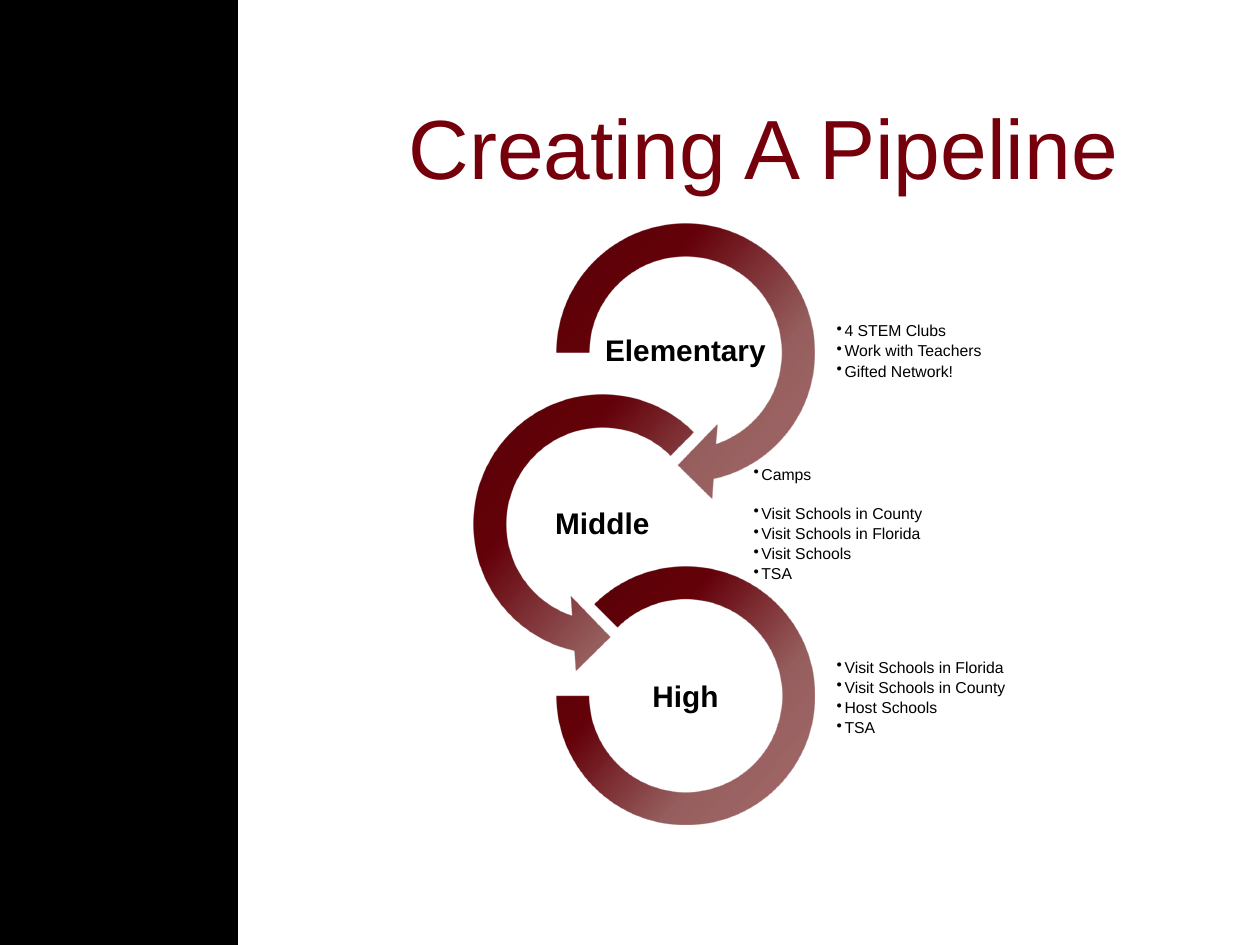
from dataclasses import dataclass

from lxml import etree
from pptx import Presentation
from pptx.dml.color import RGBColor
from pptx.enum.shapes import MSO_SHAPE
from pptx.enum.text import MSO_ANCHOR, PP_ALIGN
from pptx.oxml.ns import qn
from pptx.util import Pt

RECTANGLE = MSO_SHAPE.RECTANGLE
RIGHT_ARROW = MSO_SHAPE.CIRCULAR_ARROW
LEFT_ARROW = MSO_SHAPE.LEFT_CIRCULAR_ARROW
ARC = MSO_SHAPE.BLOCK_ARC
LEFT, CENTER = PP_ALIGN.LEFT, PP_ALIGN.CENTER
MIDDLE, BOTTOM = MSO_ANCHOR.MIDDLE, MSO_ANCHOR.BOTTOM

BLACK = RGBColor(0x00, 0x00, 0x00)
MAROON = RGBColor(0x75, 0x00, 0x0B)
ROSE = RGBColor(0x97, 0x52, 0x53)
DUSTY_ROSE = RGBColor(0x92, 0x57, 0x57)
WINE = RGBColor(0x64, 0x00, 0x09)
DARK_WINE = RGBColor(0x57, 0x00, 0x08)

# Position, colour and opacity, in percent
GRADIENT = [(0, ROSE, 85), (33, DUSTY_ROSE, 95), (67, WINE, 100), (100, DARK_WINE, 100)]
GRADIENT_ANGLE = 140

FONT = "Arial"
FIRST_RING_Y, RING_PITCH = 201.6, 97.9
FIRST_TEXT_Y, TEXT_PITCH = 201, 99
LABEL_WIDTH, LABEL_HEIGHT = 95, 47.5
LIST_OFFSET, LIST_WIDTH, LIST_HEIGHT = 85.7, 103, 68.4
BULLET_INDENT = 4.5


@dataclass
class Stage:
    name: str
    kind: int
    center_x: float
    size: float
    adjustments: tuple[float, ...]
    items: list[str]
    gap_after_first: float = 0


STAGES = [
    Stage("Elementary", RIGHT_ARROW, 391.7, 171.4, (0.11, 11.42, 45, 108, 0.125),
          ["4 STEM Clubs", "Work with Teachers", "Gifted Network!"]),
    Stage("Middle", LEFT_ARROW, 344.2, 171.4, (0.11, 11.42, 63, 189, 0.125),
          ["Camps", "Visit Schools in County", "Visit Schools in Florida",
           "Visit Schools", "TSA"], gap_after_first=10.7),
    Stage("High", ARC, 391.7, 147.2, (135, 108, 0.127),
          ["Visit Schools in Florida", "Visit Schools in County",
           "Host Schools", "TSA"]),
]


def add_plain_shape(page, kind: int, left: float, top: float,
                    width: float, height: float):
    shape = page.shapes.add_shape(kind, Pt(left), Pt(top), Pt(width), Pt(height))
    shape.shadow.inherit = False
    shape.line.fill.background()
    return shape


def fill_with_gradient(shape) -> None:
    shape.fill.gradient()
    shape.fill.gradient_angle = GRADIENT_ANGLE
    stops = shape._element.spPr.find(qn("a:gradFill")).find(qn("a:gsLst"))
    for stop in list(stops):
        stops.remove(stop)
    for position, color, opacity in GRADIENT:
        stop = etree.SubElement(stops, qn("a:gs"), pos=str(position * 1000))
        tint = etree.SubElement(stop, qn("a:srgbClr"), val=str(color))
        if opacity < 100:
            etree.SubElement(tint, qn("a:alpha"), val=str(opacity * 1000))


def add_bullet(para) -> None:
    properties = para._p.get_or_add_pPr()
    properties.set("marL", str(Pt(BULLET_INDENT)))
    properties.set("indent", str(-Pt(BULLET_INDENT)))
    etree.SubElement(properties, qn("a:buChar"), char="•")


def add_text(page, lines: list[str], left: float, top: float, width: float,
             height: float, *, size: float, color: RGBColor = BLACK,
             bold: bool = False, align=CENTER, anchor=MIDDLE,
             inset_x: float = 0.7, inset_y: float = 0.7,
             line_spacing: float = 0.9, space_after: float = 0,
             gap_after_first: float = 0, bullets: bool = False) -> None:
    box = page.shapes.add_textbox(Pt(left), Pt(top), Pt(width), Pt(height))
    frame = box.text_frame
    frame.word_wrap = True
    frame.vertical_anchor = anchor
    frame.margin_left = frame.margin_right = Pt(inset_x)
    frame.margin_top = frame.margin_bottom = Pt(inset_y)
    for index, line in enumerate(lines):
        para = frame.paragraphs[0] if index == 0 else frame.add_paragraph()
        if bullets:
            add_bullet(para)
        para.alignment = align
        para.line_spacing = line_spacing
        para.space_after = Pt(space_after + (gap_after_first if index == 0 else 0))
        span = para.add_run()
        span.text = line
        span.font.name = FONT
        span.font.size = Pt(size)
        span.font.bold = bold
        span.font.color.rgb = color


def add_stage(page, stage: Stage, ring_y: float, text_y: float) -> None:
    ring = add_plain_shape(page, stage.kind, stage.center_x - stage.size / 2,
                           ring_y - stage.size / 2, stage.size, stage.size)
    for index, value in enumerate(stage.adjustments):
        ring.adjustments[index] = value
    fill_with_gradient(ring)
    add_text(page, stage.items, stage.center_x + LIST_OFFSET,
             text_y - LIST_HEIGHT / 2, LIST_WIDTH, LIST_HEIGHT, size=9,
             align=LEFT, space_after=1.8, bullets=True,
             gap_after_first=stage.gap_after_first)
    add_text(page, [stage.name], stage.center_x - LABEL_WIDTH / 2,
             text_y - LABEL_HEIGHT / 2, LABEL_WIDTH, LABEL_HEIGHT,
             size=17, bold=True)


def main() -> None:
    deck = Presentation()
    deck.slide_width, deck.slide_height = Pt(720), Pt(540)
    page = deck.slides.add_slide(deck.slide_layouts[6])

    # Side band
    band = add_plain_shape(page, RECTANGLE, 0, 0, 136, 540)
    band.fill.solid()
    band.fill.fore_color.rgb = BLACK

    # Title
    add_text(page, ["Creating A Pipeline"], 224.6, 46, 423.4, 70, size=48,
             color=MAROON, anchor=BOTTOM, inset_x=7.2, inset_y=3.6,
             line_spacing=1)

    # Pipeline stages
    for index, stage in enumerate(STAGES):
        add_stage(page, stage, FIRST_RING_Y + index * RING_PITCH,
                  FIRST_TEXT_Y + index * TEXT_PITCH)

    deck.save("out.pptx")


if __name__ == "__main__":
    main()
